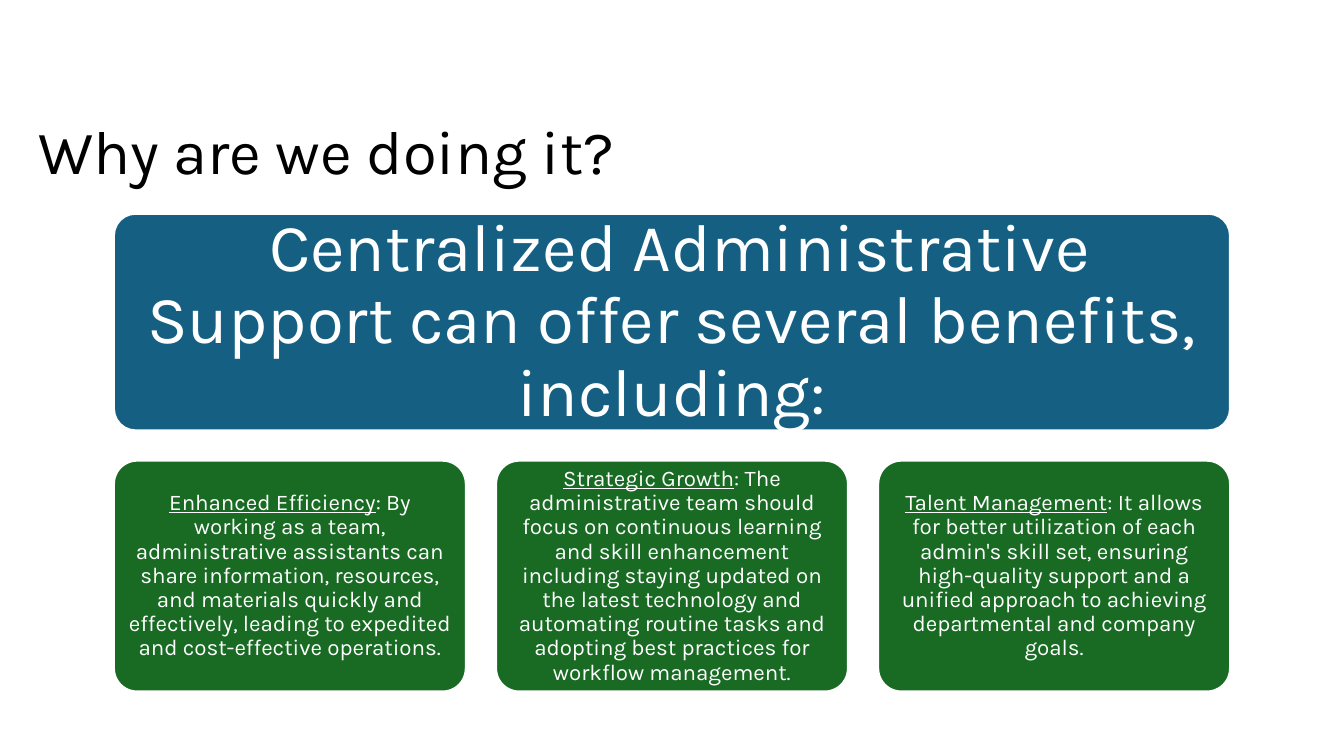
from dataclasses import dataclass

from pptx import Presentation
from pptx.dml.color import RGBColor
from pptx.enum.shapes import MSO_SHAPE
from pptx.enum.text import MSO_ANCHOR, PP_ALIGN
from pptx.util import Emu, Pt


@dataclass(frozen=True)
class Theme:
    font: str = "Karla"
    black: str = "000000"
    white: str = "FFFFFF"
    blue: str = "156082"
    green: str = "196B24"
    title_size: int = 44
    headline_size: int = 48
    body_size: int = 16
    border: float = 1.5


THEME = Theme()
EMU_PER_PX = 9144
LEFT, WIDTH = 113, 1107
CARD_TOP, CARD_W, CARD_H, CARD_GAP = 457, 349, 229, 30

BENEFITS = [
    ("Enhanced Efficiency",
     ": By working as a team, administrative assistants can share information, "
     "resources, and materials quickly and effectively, leading to expedited "
     "and cost-effective operations."),
    ("Strategic Growth",
     ": The administrative team should focus on continuous learning and skill "
     "enhancement including staying updated on the latest technology and "
     "automating routine tasks and adopting best practices for workflow "
     "management."),
    ("Talent Management",
     ": It allows for better utilization of each admin's skill set, ensuring "
     "high-quality support and a unified approach to achieving departmental "
     "and company goals."),
]


def px(n):
    return Emu(n * EMU_PER_PX)


def box(x, y, w, h):
    return px(x), px(y), px(w), px(h)


def write(tf, runs, size, color, align):
    tf.word_wrap = True
    tf.vertical_anchor = MSO_ANCHOR.MIDDLE
    p = tf.paragraphs[0]
    p.alignment = align
    p.line_spacing = 0.9
    for text, underline in runs:
        r = p.add_run()
        r.text = text
        r.font.name = THEME.font
        r.font.size = Pt(size)
        r.font.color.rgb = RGBColor.from_string(color)
        r.font.underline = underline


def add_title(s, text):
    sp = s.shapes.add_textbox(*box(28, 106, 1202, 95))
    write(sp.text_frame, [(text, False)], THEME.title_size, THEME.black, PP_ALIGN.LEFT)


def add_panel(s, bounds, fill, runs, size, inset):
    sp = s.shapes.add_shape(MSO_SHAPE.ROUNDED_RECTANGLE, *box(*bounds))
    sp.adjustments[0] = 0.1
    sp.shadow.inherit = False
    sp.fill.solid()
    sp.fill.fore_color.rgb = RGBColor.from_string(fill)
    sp.line.color.rgb = RGBColor.from_string(THEME.white)
    sp.line.width = Pt(THEME.border)
    tf = sp.text_frame
    tf.margin_left = tf.margin_right = tf.margin_top = tf.margin_bottom = px(inset)
    write(tf, runs, size, THEME.white, PP_ALIGN.CENTER)


def main():
    prs = Presentation()
    prs.slide_width, prs.slide_height = px(1333), px(750)
    s = prs.slides.add_slide(prs.slide_layouts[6])
    add_title(s, "Why are we doing it?")
    headline = " Centralized Administrative Support can offer several benefits, including:"
    add_panel(s, (LEFT, 212, WIDTH, 215), THEME.blue, [(headline, False)],
              THEME.headline_size, 20)
    for i, (name, detail) in enumerate(BENEFITS):
        x = LEFT + i * (CARD_W + CARD_GAP)
        add_panel(s, (x, CARD_TOP, CARD_W, CARD_H), THEME.green,
                  [(name, True), (detail, False)], THEME.body_size, 7)
    prs.save("out.pptx")


if __name__ == "__main__":
    main()
